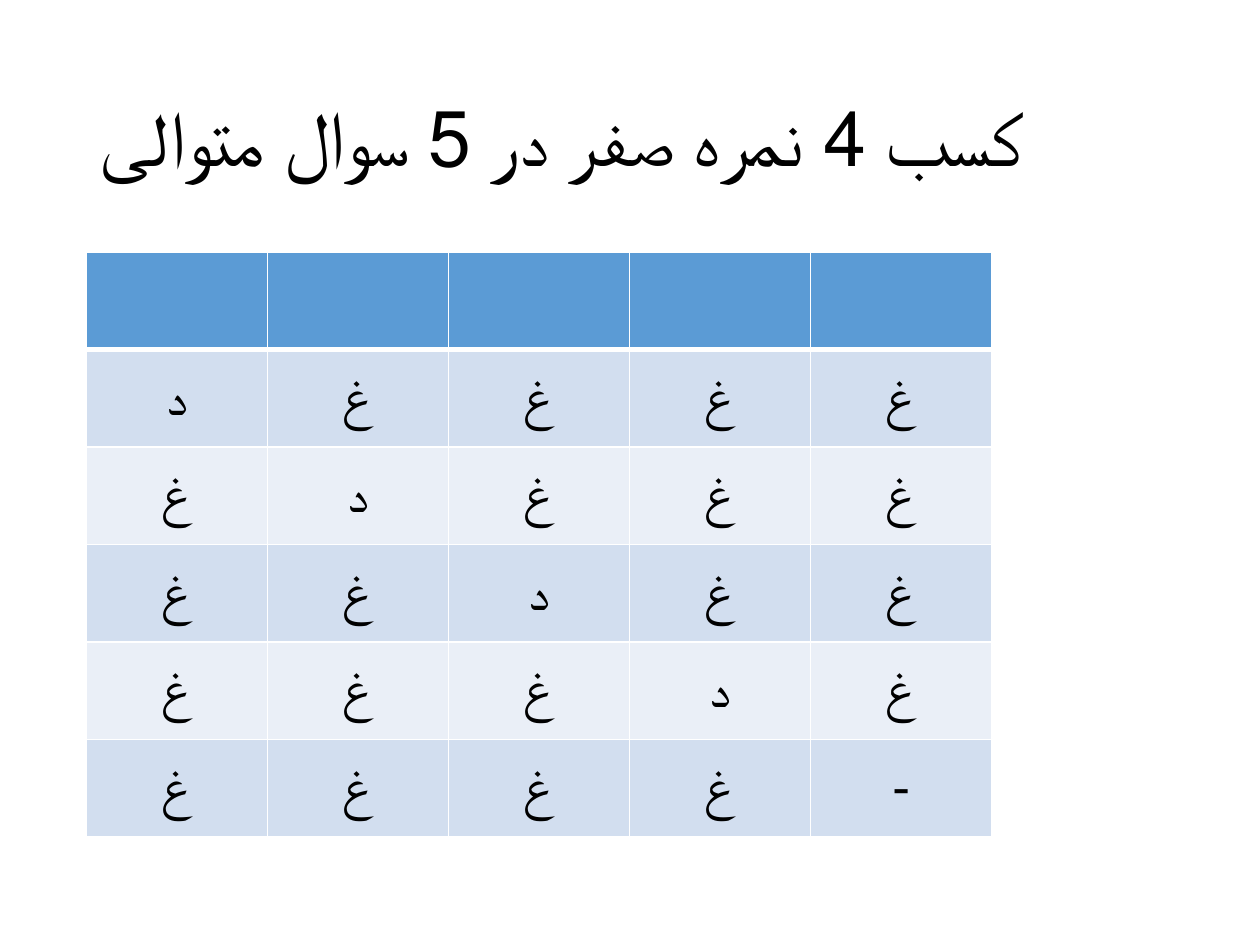
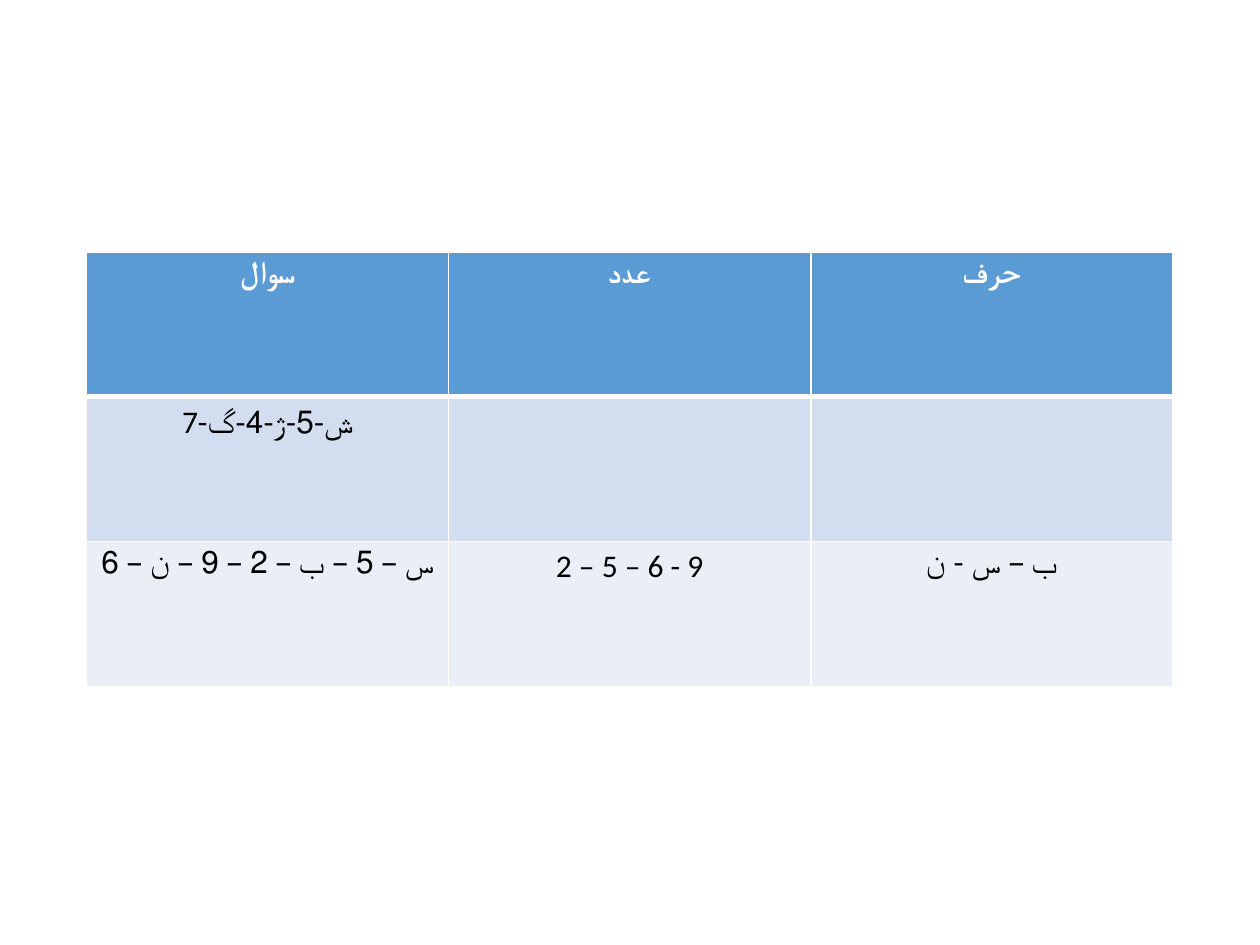
import pptx
import pptx.util
import pptx.dml.color
import pptx.enum.text
import pptx.oxml
import pptx.oxml.ns

Pt = pptx.util.Pt
ALIGN = pptx.enum.text.PP_ALIGN
ANCHOR = pptx.enum.text.MSO_ANCHOR

FONT = "Calibri"
BLACK, WHITE = "000000", "FFFFFF"
HEAD = "5B9BD5"
BANDS = ("D2DEEF", "EAEFF7")
LEFT, TOP, WIDTH = 49.5, 144, 620.75

RIGHT_MARK, WRONG_MARK = "د", "غ"


def color(code):
    return pptx.dml.color.RGBColor.from_string(code)


def write(frame, text, size=18, ink=BLACK, bold=False, align=ALIGN.LEFT, space=1.0):
    par = frame.paragraphs[0]
    par.alignment = align
    par.line_spacing = space
    run = par.add_run()
    run.text = text
    run.font.name = FONT
    run.font.size = Pt(size)
    run.font.bold = bold
    run.font.color.rgb = color(ink)


def add_title(slide, text):
    box = slide.shapes.add_textbox(Pt(LEFT), Pt(28.75), Pt(WIDTH), Pt(104.4))
    frame = box.text_frame
    frame.word_wrap = True
    frame.vertical_anchor = ANCHOR.MIDDLE
    write(frame, text, size=44, space=0.9)


def add_edge(cell, side, width):
    line = pptx.oxml.parse_xml(
        f'<a:ln{side} {pptx.oxml.ns.nsdecls("a")} w="{Pt(width)}">'
        f'<a:solidFill><a:srgbClr val="{WHITE}"/></a:solidFill></a:ln{side}>'
    )
    cell._tc.get_or_add_tcPr().append(line)


def style_cell(cell, row):
    """Give a cell its white edges and its header or band fill."""
    edges = {"L": 1, "R": 1, "T": 3 if row == 1 else 1, "B": 3 if row == 0 else 1}
    for side, width in edges.items():
        add_edge(cell, side, width)
    cell.fill.solid()
    cell.fill.fore_color.rgb = color(BANDS[(row - 1) % 2] if row else HEAD)


def add_grid(slide, rows, col_wide, row_high, size=18, anchor=ANCHOR.TOP):
    """Draw a banded table whose first row is the header."""
    count = len(rows[0])
    table = slide.shapes.add_table(
        len(rows), count, Pt(LEFT), Pt(TOP),
        Pt(col_wide * count), Pt(row_high * len(rows)),
    ).table
    for col in table.columns:
        col.width = Pt(col_wide)
    for r, texts in enumerate(rows):
        table.rows[r].height = Pt(row_high)
        for c, text in enumerate(texts):
            cell = table.cell(r, c)
            style_cell(cell, r)
            if text:
                cell.vertical_anchor = anchor
                write(cell.text_frame, text, size=size, bold=r == 0,
                      ink=BLACK if r else WHITE, align=ALIGN.CENTER)


def score_rows():
    """Move the one right answer along the rows; the last row stops early."""
    rows = [[""] * 5]
    for hit in range(4):
        rows.append([RIGHT_MARK if c == hit else WRONG_MARK for c in range(5)])
    rows.append([WRONG_MARK] * 4 + ["-"])
    return rows


def main():
    deck = pptx.Presentation()
    deck.slide_width, deck.slide_height = Pt(720), Pt(540)
    blank = deck.slide_layouts[6]

    slide = deck.slides.add_slide(blank)
    add_title(slide, "کسب 4 نمره صفر در 5 سوال متوالی")
    add_grid(slide, score_rows(), 103.46, 55.75, size=32, anchor=ANCHOR.MIDDLE)

    slide = deck.slides.add_slide(blank)
    add_grid(slide, [
        ["سوال", "عدد", "حرف"],
        ["7-ش-5-ژ-4-گ", "", ""],
        ["س – 5 – ب – 2 – 9 – ن – 6", "2 – 5 – 6 - 9", "ب – س - ن"],
    ], WIDTH / 3, 82.75)

    deck.save("out.pptx")


if __name__ == "__main__":
    main()
